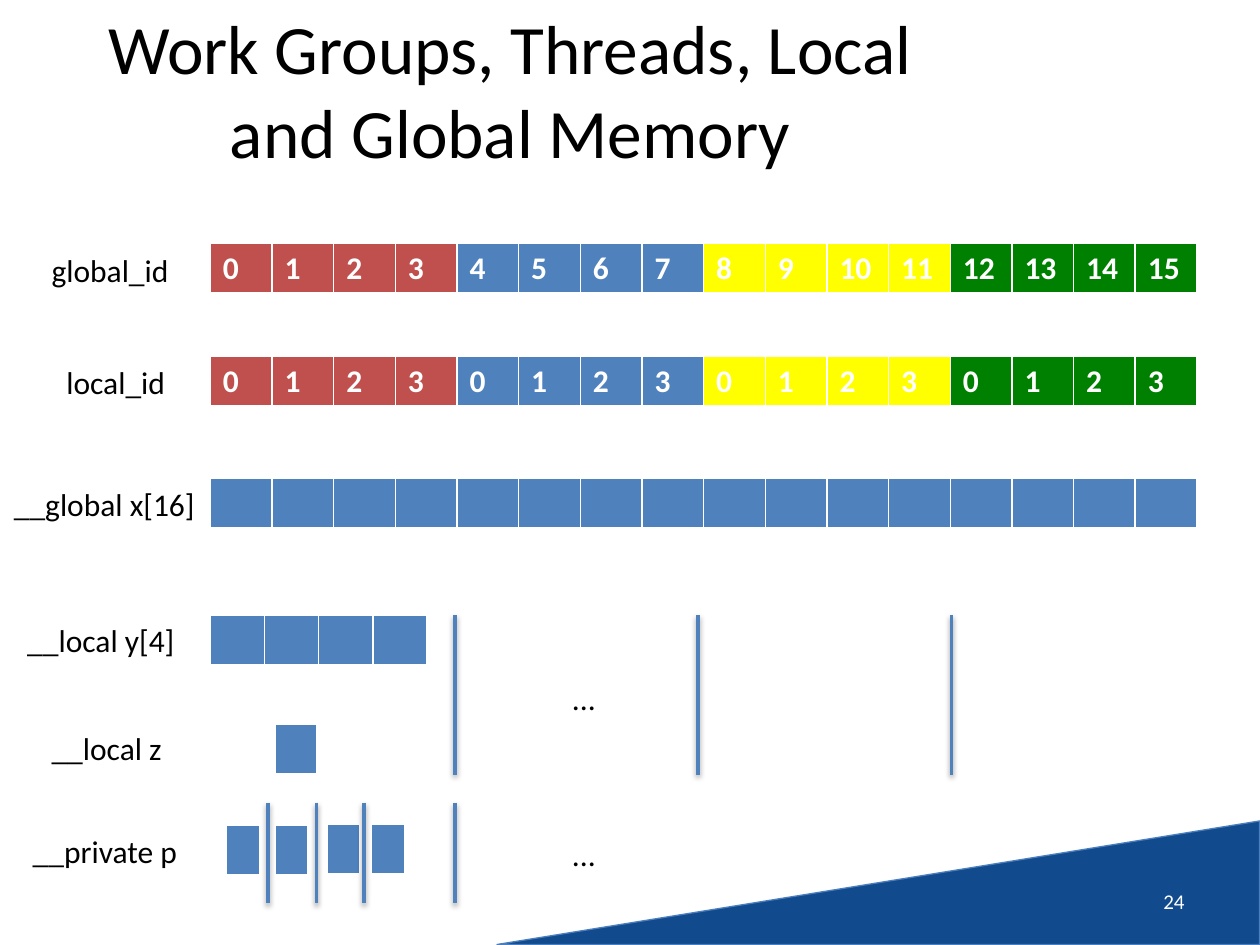
from pptx import Presentation, oxml, util as u
from pptx.dml.color import RGBColor
from pptx.enum import shapes, text

BLUE, RED, YELLOW, GREEN = "4F81BD", "C0504D", "FFFF00", "008000"
BLACK, WHITE = "000000", "FFFFFF"
NAMESPACE = 'xmlns:a="http://schemas.openxmlformats.org/drawingml/2006/main"'
color = RGBColor.from_string

deck = Presentation()
deck.slide_width, deck.slide_height = u.Cm(25.4), u.Cm(19.05)
page = deck.slides.add_slide(deck.slide_layouts[6])


def add_text(words, left, top, width, height=1.02, size=18, ink=BLACK,
             align=text.PP_ALIGN.LEFT, anchor=text.MSO_ANCHOR.TOP, wrap=False):
    box = page.shapes.add_textbox(u.Cm(left), u.Cm(top), u.Cm(width), u.Cm(height))
    frame = box.text_frame
    frame.word_wrap = wrap
    frame.auto_size = text.MSO_AUTO_SIZE.NONE if wrap else text.MSO_AUTO_SIZE.SHAPE_TO_FIT_TEXT
    frame.vertical_anchor = anchor
    para = frame.paragraphs[0]
    para.alignment = align
    span = para.add_run()
    span.text = words
    span.font.name, span.font.size = "Calibri", u.Pt(size)
    span.font.color.rgb = color(ink)


def add_cells(left, top, width, fills, labels=(), height=1.03):
    """Draw a one-row table with one cell for each fill colour."""
    frame = page.shapes.add_table(1, len(fills), u.Cm(left), u.Cm(top), u.Cm(width), u.Cm(height))
    table = frame.table
    table.first_row = table.horz_banding = False
    for index, fill in enumerate(fills):
        cell = table.cell(0, index)
        properties = cell._tc.get_or_add_tcPr()
        for side, points in (("L", 1), ("R", 1), ("T", 1), ("B", 3)):
            properties.append(oxml.parse_xml(
                f'<a:ln{side} {NAMESPACE} w="{u.Pt(points)}"><a:solidFill>'
                f'<a:srgbClr val="{WHITE}"/></a:solidFill></a:ln{side}>'))
        cell.fill.solid()
        cell.fill.fore_color.rgb = color(fill)
        if labels:
            span = cell.text_frame.paragraphs[0].add_run()
            span.text = str(labels[index])
            span.font.name, span.font.size, span.font.bold = "Calibri", u.Pt(18), True
            span.font.color.rgb = color(WHITE)


# Corner triangle, title and page number
corner = page.shapes.add_shape(shapes.MSO_SHAPE.RIGHT_TRIANGLE,
                               u.Cm(16.46), u.Cm(10.11), u.Cm(2.49), u.Cm(15.37))
corner.rotation = 270
corner.fill.solid()
corner.fill.fore_color.rgb = color("114B8E")
corner.line.color.rgb = color("4B7EBC")
corner.line.width = u.Pt(0.75)
shadowed = [(corner, 35000, 1.8)]

add_text("Work Groups, Threads, Local and Global Memory", 1.27, 0.2, 18.03, 3.18, size=39.6,
         align=text.PP_ALIGN.CENTER, anchor=text.MSO_ANCHOR.MIDDLE, wrap=True)
add_text("24", 18.21, 17.65, 5.92, size=12, ink=WHITE,
         align=text.PP_ALIGN.RIGHT, anchor=text.MSO_ANCHOR.MIDDLE, wrap=True)

# Row names and ellipses
for words, left, top, width in (
        ("global_id", 0.79, 4.93, 2.9), ("local_id", 1.09, 7.19, 2.51),
        ("__global x[16]", 0.03, 9.65, 4.19), ("__local y[4]", 0.3, 12.4, 3.51),
        ("__local z", 0.79, 14.58, 2.77), ("__private p", 0.41, 16.64, 3.45),
        ("...", 11.28, 13.56, 0.99), ("...", 11.28, 16.71, 0.99)):
    add_text(words, left, top, width)

# Ids by work group, then global, local and private memory
group_fills = [fill for fill in (RED, BLUE, YELLOW, GREEN) for _ in range(4)]
add_cells(4.24, 4.9, 19.89, group_fills, range(16))
add_cells(4.24, 7.19, 19.89, group_fills, [thread % 4 for thread in range(16)])
add_cells(4.24, 9.65, 19.89, [BLUE] * 16)
add_cells(4.24, 12.4, 4.37, [BLUE] * 4)
add_cells(5.54, 14.6, 0.84, [BLUE], height=1.02)
for left, top in ((4.57, 16.64), (5.54, 16.64), (6.6, 16.61), (7.49, 16.61)):
    add_cells(left, top, 0.66, [BLUE])

# Dividers between work groups and between threads
for top, bottom, places in ((12.4, 15.62, (9.17, 14.07, 19.18)),
                            (16.18, 18.21, (5.4, 6.38, 7.34, 9.17))):
    for x in places:
        divider = page.shapes.add_connector(shapes.MSO_CONNECTOR.STRAIGHT,
                                            u.Cm(x), u.Cm(top), u.Cm(x), u.Cm(bottom))
        divider.line.color.rgb = color(BLUE)
        divider.line.width = u.Pt(2)
        shadowed.append((divider, 38000, 1.6))

for shape, opacity, distance in shadowed:
    shape._element.spPr.append(oxml.parse_xml(
        f'<a:effectLst {NAMESPACE}><a:outerShdw blurRad="{u.Pt(3.1)}" dist="{u.Pt(distance)}" '
        f'dir="5400000" rotWithShape="0"><a:srgbClr val="{BLACK}"><a:alpha val="{opacity}"/>'
        '</a:srgbClr></a:outerShdw></a:effectLst>'))

deck.save("out.pptx")
